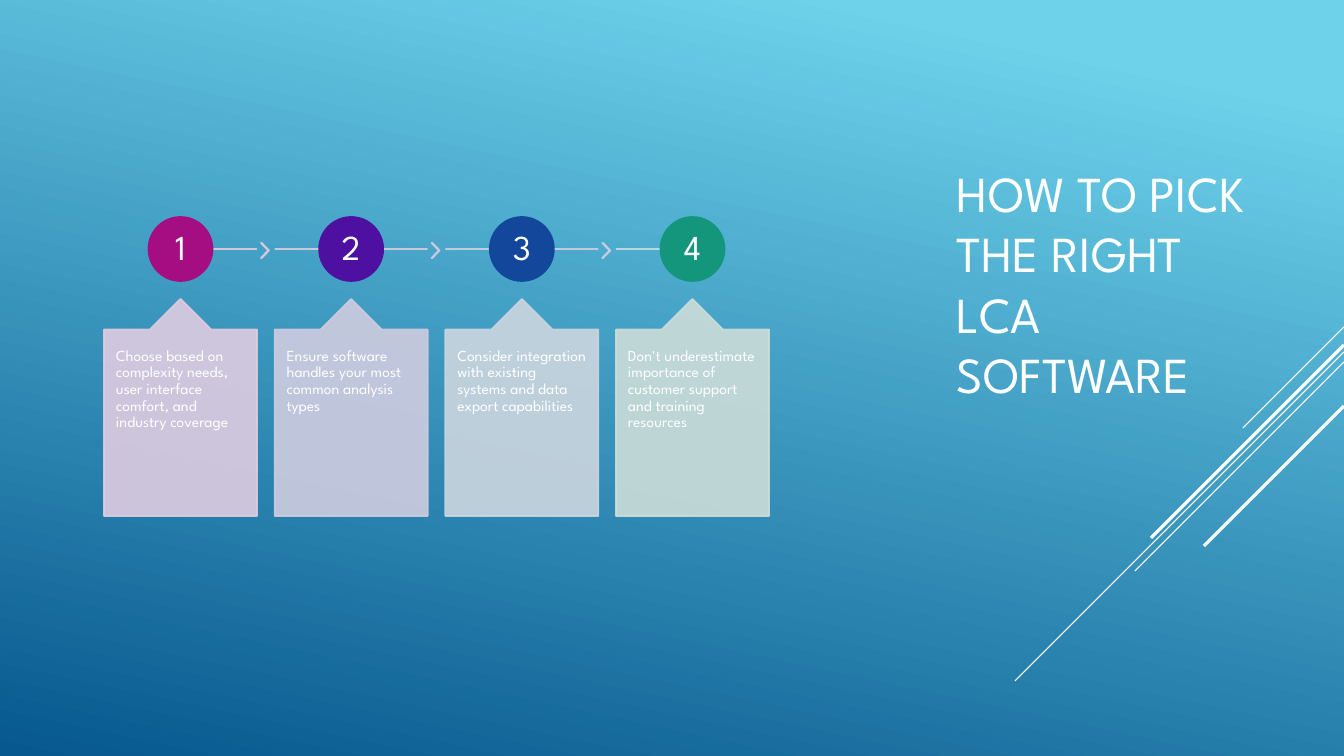
import pptx
import pptx.dml.color
import pptx.enum.dml
import pptx.enum.shapes
import pptx.enum.text
import pptx.oxml.ns
import pptx.util
from lxml import etree

TITLE = "HOW TO PICK THE RIGHT LCA SOFTWARE"
# number, advice, circle, line, chevron and card colours
STEPS = [
    ("1", "Choose based on complexity needs, user interface comfort, and industry coverage",
     "A50E82", "E1CCD8", "E0CCDD", "DECCE0"),
    ("2", "Ensure software handles your most common analysis types",
     "4D10A0", "D9CCE0", "D4CCDF", "CFCCDF"),
    ("3", "Consider integration with existing systems and data export capabilities",
     "12479B", "CCCEDF", "CCD2DE", "CCD6DE"),
    ("4", "Don't underestimate importance of customer support and training resources",
     "14967C", "CCDBDE", None, "CCDDD8"),
]
# start height on the right edge, run to the lower left, line width in points
DIAGONALS = [(327, 101, 0.75), (352, 329, 0.75), (362, 209, 0.75),
             (345, 193, 2.25), (406, 140, 2.25)]
BACKDROP = [(0.1, "6ED2EB"), (1, "06588E")]
FONT, WHITE = "League Spartan", "FFFFFF"

PAGE_W, PAGE_H = 1344, 756
SCALE = pptx.util.Inches(1) / 100.8
FIRST_LEFT, LAST_LEFT = 104, 616
PITCH = (LAST_LEFT - FIRST_LEFT) / (len(STEPS) - 1)
CARD_W, CARD_TOP, CARD_H = 153, 299, 217
BODY_TOP, BODY_H = 330, 186
CIRCLE, CIRCLE_TOP, LINE_Y = 64, 217, 249
CHEVRON_GAP, CHEVRON_W, CHEVRON_H = 157, 8, 15

SHAPE = pptx.enum.shapes.MSO_SHAPE
ANCHOR = pptx.enum.text.MSO_ANCHOR
ALIGN = pptx.enum.text.PP_ALIGN


def px(length):
    return pptx.util.Emu(round(length * SCALE))


def paint(fill, colour, opacity=100):
    fill.solid()
    fill.fore_color.rgb = pptx.dml.color.RGBColor.from_string(colour)
    if opacity < 100:
        for node in fill._xPr.iter(pptx.oxml.ns.qn("a:srgbClr")):
            alpha = etree.SubElement(node, pptx.oxml.ns.qn("a:alpha"))
            alpha.set("val", str(opacity * 1000))


def add_figure(page, preset, box, colour, opacity=100, adjustments=()):
    figure = page.shapes.add_shape(preset, *map(px, box))
    figure.shadow.inherit = False
    for index, value in enumerate(adjustments):
        figure.adjustments[index] = value
    paint(figure.fill, colour, opacity)
    figure.line.width = pptx.util.Pt(1.25)
    # A fill set on the line keeps the fill of the body apart.
    paint(figure.line.fill, colour)
    if opacity < 100:
        paint(figure.line.fill, colour, opacity)
    return figure


def add_line(page, start, end, colour, width, opacity=100):
    line = page.shapes.add_connector(pptx.enum.shapes.MSO_CONNECTOR.STRAIGHT,
                                     *map(px, start + end))
    line.line.width = pptx.util.Pt(width)
    paint(line.line.fill, colour, opacity)
    etree.SubElement(line._element.spPr, pptx.oxml.ns.qn("a:effectLst"))


def add_text(page, box, text, size, insets, anchor, align=ALIGN.LEFT, spacing=1.0):
    frame = page.shapes.add_textbox(*map(px, box)).text_frame
    side, end = map(px, insets)
    para = frame.paragraphs[0]
    span = para.add_run()
    formats = [
        (frame, {"word_wrap": True, "vertical_anchor": anchor, "margin_left": side,
                 "margin_right": side, "margin_top": end, "margin_bottom": end}),
        (para, {"alignment": align, "line_spacing": spacing}),
        (span, {"text": text}),
        (span.font, {"name": FONT, "size": pptx.util.Pt(size)}),
    ]
    for target, values in formats:
        for name, value in values.items():
            setattr(target, name, value)
    paint(span.font.fill, WHITE)


def add_backdrop(page):
    backdrop = page.shapes.add_shape(SHAPE.RECTANGLE, 0, 0, px(PAGE_W), px(PAGE_H))
    backdrop.shadow.inherit = False
    backdrop.line.fill.background()
    backdrop.fill.gradient()
    backdrop.fill.gradient_angle = 360 - 102
    for stop, (position, colour) in zip(backdrop.fill.gradient_stops, BACKDROP):
        stop.position = position
        stop.color.rgb = pptx.dml.color.RGBColor.from_string(colour)


def add_step(page, index, step):
    number, advice, circle_colour, line_colour, chevron_colour, card_colour = step
    left = FIRST_LEFT + index * PITCH
    right, centre = left + CARD_W, left + CARD_W / 2
    start = centre if index == 0 else left
    end = centre if index == len(STEPS) - 1 else right
    add_line(page, (start, LINE_Y), (end, LINE_Y), line_colour, 1.25, 90)
    if chevron_colour:
        chevron = (left + CHEVRON_GAP, LINE_Y - 6, CHEVRON_W, CHEVRON_H)
        add_figure(page, SHAPE.CHEVRON, chevron, chevron_colour, 90, [0.9])
    circle = (centre - CIRCLE / 2, CIRCLE_TOP, CIRCLE, CIRCLE)
    add_figure(page, SHAPE.OVAL, circle, circle_colour)
    add_text(page, circle, number, 25, (2, 2), ANCHOR.MIDDLE, ALIGN.CENTER, 0.9)
    add_figure(page, SHAPE.UP_ARROW_CALLOUT, (left, CARD_TOP, CARD_W, CARD_H),
               card_colour, 90, [0.5, 0.2, 0.2, 1])
    add_text(page, (left, BODY_TOP, CARD_W, BODY_H), advice, 11, (12, 18),
             ANCHOR.TOP, spacing=0.9)


def main():
    deck = pptx.Presentation()
    deck.slide_width, deck.slide_height = px(PAGE_W), px(PAGE_H)
    page = deck.slides.add_slide(deck.slide_layouts[6])
    add_backdrop(page)
    for top, run, width in DIAGONALS:
        add_line(page, (PAGE_W, top), (PAGE_W - run, top + run), WHITE, width)
    add_text(page, (947, 104, 336, 358), TITLE, 36, (10, 5), ANCHOR.MIDDLE)
    for index, step in enumerate(STEPS):
        add_step(page, index, step)
    deck.save("out.pptx")


if __name__ == "__main__":
    main()
